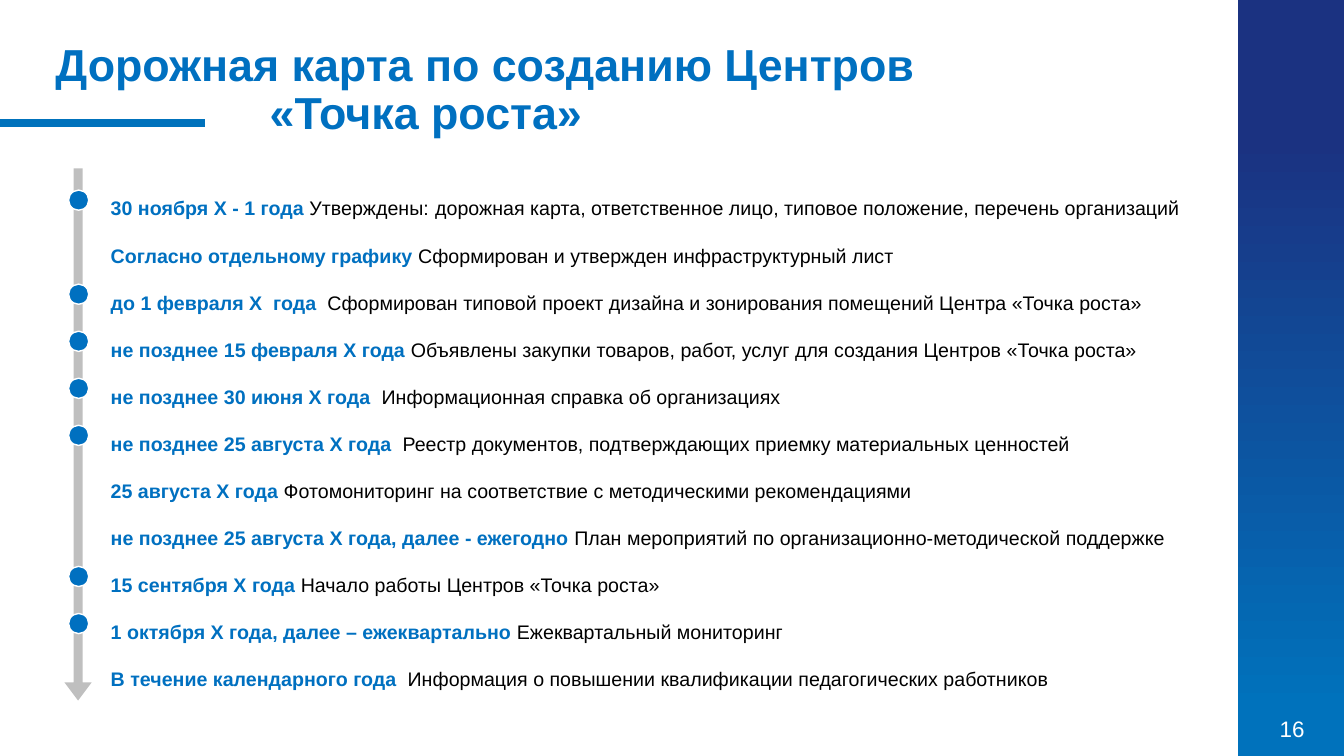
from lxml.etree import SubElement
from pptx import Presentation
from pptx.dml.color import RGBColor
from pptx.enum.shapes import MSO_CONNECTOR, MSO_SHAPE
from pptx.enum.text import MSO_ANCHOR, PP_ALIGN
from pptx.oxml.ns import qn
from pptx.util import Pt

BLUE = RGBColor(0x00, 0x70, 0xC0)
BAND_BLUE = RGBColor(0x00, 0x72, 0xBC)
NAVY = RGBColor(0x1B, 0x32, 0x81)
GRAY = RGBColor(0xBF, 0xBF, 0xBF)
BLACK = RGBColor(0, 0, 0)
WHITE = RGBColor(0xFF, 0xFF, 0xFF)

# Title lines with their left indents
TITLE = [("Дорожная карта по созданию Центров", 0), ("«Точка роста»", 153)]
PAGE_NUMBER = "16"

# Deadline, action, whether the timeline has a dot
STAGES = [
    ("30 ноября X - 1 года ", "Утверждены: дорожная карта, ответственное лицо, "
     "типовое положение, перечень организаций", True),
    ("Согласно отдельному графику ", "Сформирован и утвержден инфраструктурный лист", False),
    ("до 1 февраля X  года  ", "Сформирован типовой проект дизайна и зонирования "
     "помещений Центра «Точка роста»", True),
    ("не позднее 15 февраля X года ", "Объявлены закупки товаров, работ, услуг "
     "для создания Центров «Точка роста»", True),
    ("не позднее 30 июня X года  ", "Информационная справка об организациях", True),
    ("не позднее 25 августа X года  ", "Реестр документов, подтверждающих приемку "
     "материальных ценностей", True),
    ("25 августа X года ", "Фотомониторинг на соответствие с методическими "
     "рекомендациями", False),
    ("не позднее 25 августа X года, далее - ежегодно ", "План мероприятий по "
     "организационно-методической поддержке", False),
    ("15 сентября X года ", "Начало работы Центров «Точка роста»", True),
    ("1 октября X года, далее – ежеквартально ", "Ежеквартальный мониторинг", True),
    ("В течение календарного года  ", "Информация о повышении квалификации "
     "педагогических работников", False),
]
FIRST_DOT_TOP, STAGE_PITCH, DOT_SIZE = 135.8, 33.6, 14.4


def add_plain_shape(slide, kind, left, top, width, height):
    shape = slide.shapes.add_shape(kind, Pt(left), Pt(top), Pt(width), Pt(height))
    shape.shadow.inherit = False
    shape.line.fill.background()
    return shape


def add_frame(slide, left, top, width, height, anchor=MSO_ANCHOR.TOP):
    frame = slide.shapes.add_textbox(Pt(left), Pt(top), Pt(width), Pt(height)).text_frame
    frame.word_wrap = True
    frame.vertical_anchor = anchor
    return frame


def style(run, size, color, bold=False):
    run.font.name = "Arial"
    run.font.size = Pt(size)
    run.font.bold = bold
    run.font.color.rgb = color


def add_side_band(slide):
    band = add_plain_shape(slide, MSO_SHAPE.RECTANGLE, 884.2, 0, 75.8, 540)
    band.fill.gradient()
    band.fill.gradient_angle = 270
    for stop, position, color in zip(band.fill.gradient_stops, (0.18, 0.94), (NAVY, BAND_BLUE)):
        stop.position = position
        stop.color.rgb = color

    number = add_frame(slide, 894.2, 505.4, 57.6, 29.5, MSO_ANCHOR.MIDDLE)
    number.text = PAGE_NUMBER
    number.paragraphs[0].alignment = PP_ALIGN.CENTER
    style(number.paragraphs[0].runs[0], 16, WHITE)


def add_title(slide):
    rule = slide.shapes.add_connector(MSO_CONNECTOR.STRAIGHT, 0, Pt(87.8), Pt(146.2), Pt(87.8))
    rule.line.color.rgb = BAND_BLUE
    rule.line.width = Pt(6)
    SubElement(rule._element.spPr, qn("a:effectLst"))

    title = add_frame(slide, 36, 26.6, 741.6, 77, MSO_ANCHOR.MIDDLE)
    title.margin_left = title.margin_right = title.margin_top = title.margin_bottom = Pt(3.6)
    title.text = "\n".join(words for words, _ in TITLE)
    for line, (_, indent) in zip(title.paragraphs, TITLE):
        line.line_spacing = 0.9
        line._p.get_or_add_pPr().set("marL", str(Pt(indent)))
        style(line.runs[0], 32, BLUE, bold=True)


def add_roadmap(slide):
    arrow = add_plain_shape(slide, MSO_SHAPE.DOWN_ARROW, 46.1, 120.2, 19.4, 380.2)
    arrow.adjustments[0], arrow.adjustments[1] = 0.333, 0.667
    arrow.fill.solid()
    arrow.fill.fore_color.rgb = GRAY

    stages = add_frame(slide, 72, 115.2, 786.2, 385.2)
    for row, (deadline, action, has_dot) in enumerate(STAGES):
        paragraph = stages.paragraphs[0] if row == 0 else stages.add_paragraph()
        paragraph.line_spacing = 2.0
        paragraph.text = deadline
        style(paragraph.runs[0], 14, BLUE, bold=True)
        lead, colon, rest = action.partition(": ")
        if colon:
            action_parts = [(lead + ":", 14), (" ", 16), (rest, 14)]
        else:
            action_parts = [(action, 14)]
        for words, size in action_parts:
            run = paragraph.add_run()
            run.text = words
            style(run, size, BLACK)
        if has_dot:
            dot = add_plain_shape(slide, MSO_SHAPE.OVAL, 49,
                                  FIRST_DOT_TOP + row * STAGE_PITCH, DOT_SIZE, DOT_SIZE)
            dot.fill.solid()
            dot.fill.fore_color.rgb = BLUE
            dot.line.color.rgb = WHITE
            dot.line.width = Pt(1)


def main():
    presentation = Presentation()
    presentation.slide_width, presentation.slide_height = Pt(960), Pt(540)
    slide = presentation.slides.add_slide(presentation.slide_layouts[6])
    add_side_band(slide)
    add_title(slide)
    add_roadmap(slide)
    presentation.save("out.pptx")


if __name__ == "__main__":
    main()
